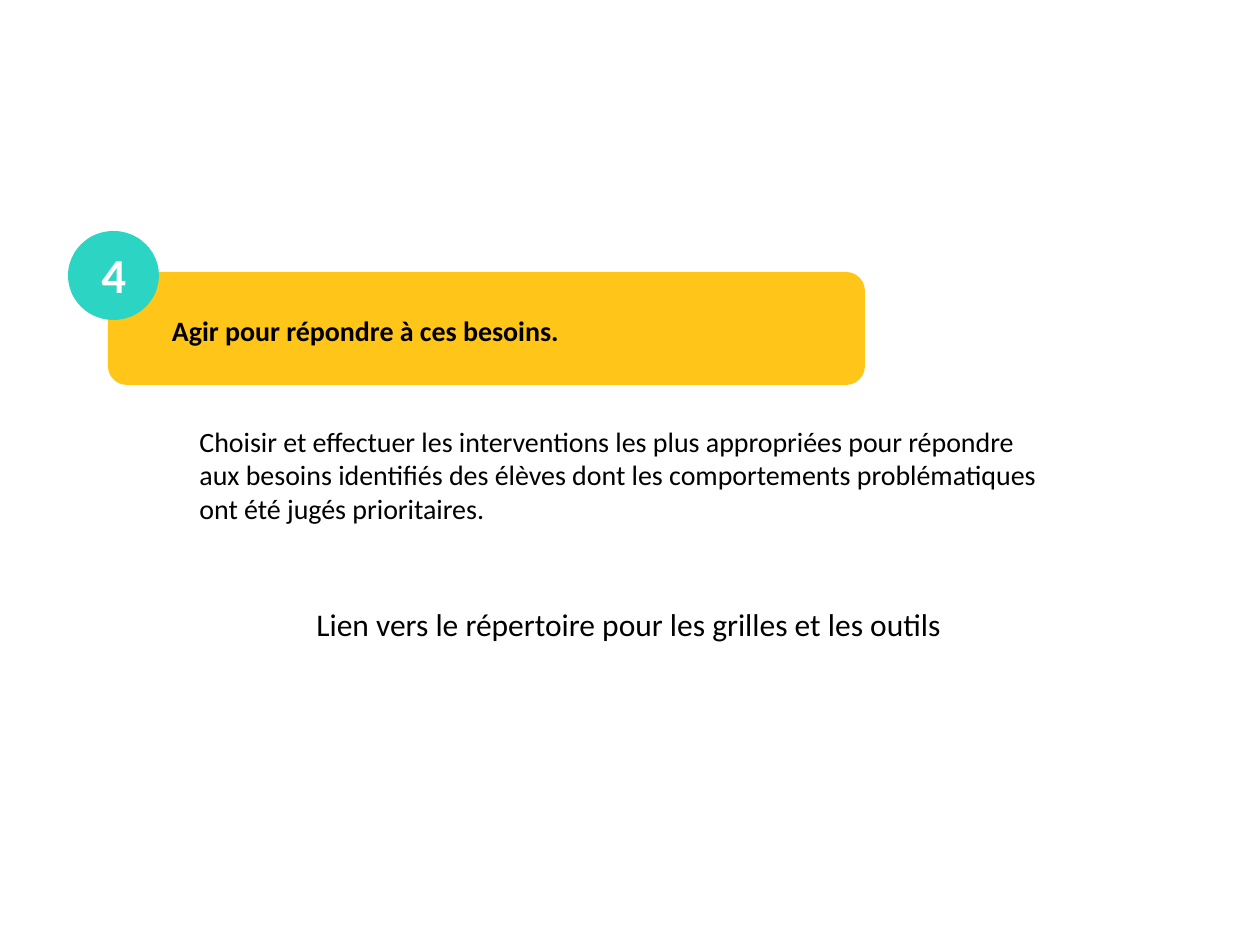
"""Build the slide for step 4: acting to meet the identified needs."""
from lxml import etree
from pptx import Presentation, util as u
from pptx.dml.color import RGBColor
from pptx.enum import shapes, text
from pptx.oxml.ns import qn

COLORS = {"banner": "FFC000", "badge": "2CD4C4", "ink": "000000", "light": "FFFFFF"}
EMU_PER_PX = 914400 / 126


def px(value):
    return u.Emu(round(value * EMU_PER_PX))


class StepSlide:
    def __init__(self, presentation, font="Calibri"):
        self.slide = presentation.slides.add_slide(presentation.slide_layouts[6])
        self.font = font

    def shape(self, kind, box, color, opacity=100):
        shape = self.slide.shapes.add_shape(kind, *map(px, box))
        shape.shadow.inherit = False
        shape.fill.solid()
        shape.fill.fore_color.rgb = RGBColor.from_string(COLORS[color])
        shape.line.fill.background()
        if opacity < 100:
            fill_color = shape.fill._xPr.find(qn("a:solidFill"))[0]
            etree.SubElement(fill_color, qn("a:alpha"), val=str(opacity * 1000))
        return shape

    def text(self, box, lines, size, color="ink", bold=False,
             anchor=text.MSO_ANCHOR.TOP, inset=None):
        frame = self.slide.shapes.add_textbox(*map(px, box)).text_frame
        frame.word_wrap = True
        frame.vertical_anchor = anchor
        if inset is not None:
            frame.margin_left = frame.margin_right = px(inset)
            frame.margin_top = frame.margin_bottom = px(inset)
        paragraph = frame.paragraphs[0]
        for index, line in enumerate(lines):
            if index:
                paragraph.add_line_break()
            run = paragraph.add_run()
            run.text = line
            run.font.name = self.font
            run.font.size = u.Pt(size)
            run.font.bold = bold
            run.font.color.rgb = RGBColor.from_string(COLORS[color])


def main():
    presentation = Presentation()
    presentation.slide_width, presentation.slide_height = px(1260), px(945)
    step = StepSlide(presentation)
    step.shape(shapes.MSO_SHAPE.ROUNDED_RECTANGLE, (108, 272, 757, 113), "banner", opacity=90)
    step.text((168, 279, 731, 102), ["Agir pour répondre à ces besoins."], 16,
              bold=True, anchor=text.MSO_ANCHOR.MIDDLE, inset=4)
    step.shape(shapes.MSO_SHAPE.OVAL, (68, 231, 91, 89), "badge")
    step.text((89, 238, 52, 72), ["4"], 28, color="light", bold=True)
    step.text((187, 418, 990, 115), [
        "Choisir et effectuer les interventions les plus appropriées pour répondre ",
        "aux besoins identifiés des élèves dont les comportements problématiques ",
        "ont été jugés prioritaires.",
    ], 16)
    step.text((304, 599, 663, 50), ["Lien vers le répertoire pour les grilles et les outils"], 18)
    presentation.save("out.pptx")


if __name__ == "__main__":
    main()
